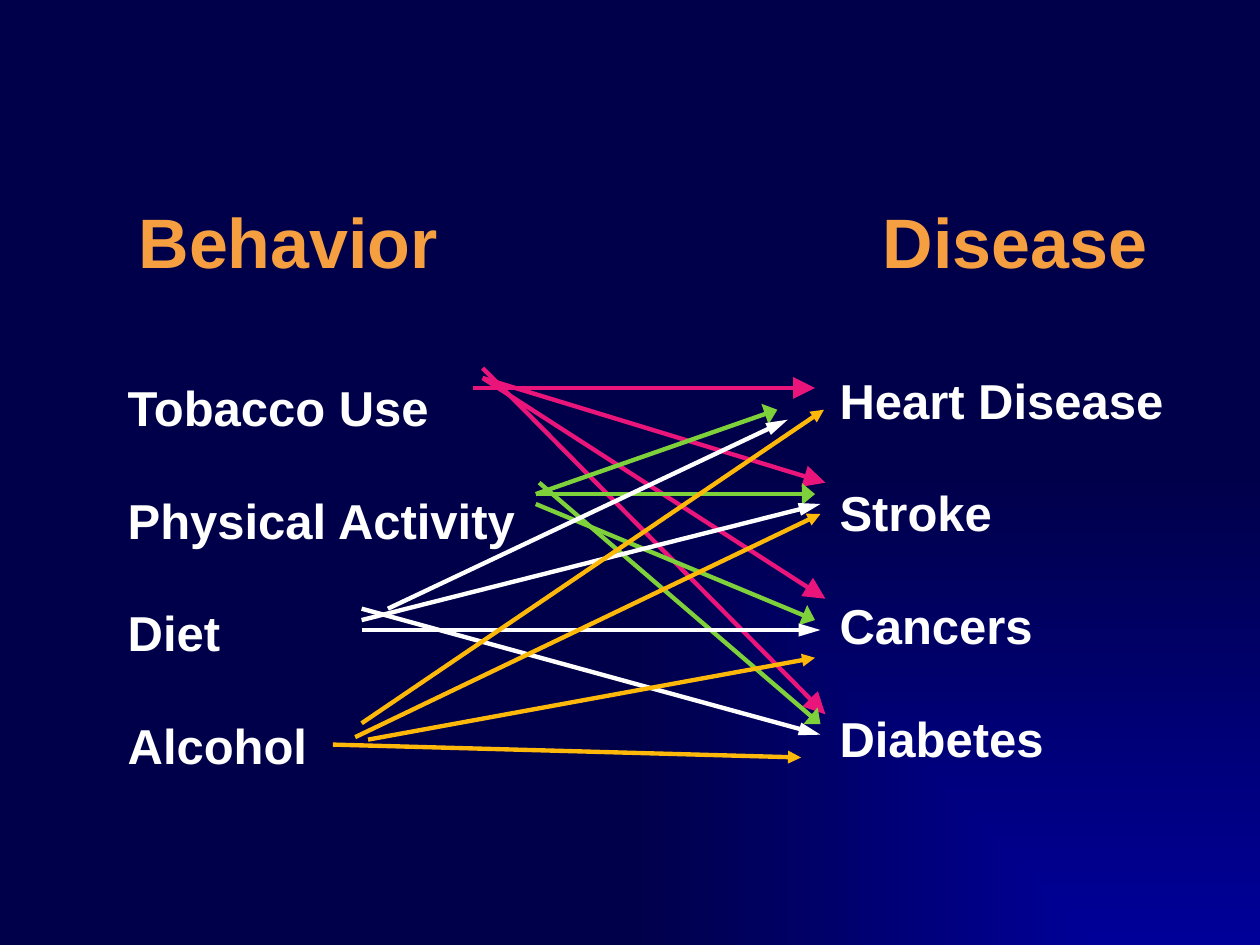
from pptx import Presentation
from pptx.dml.color import RGBColor
from pptx.enum.shapes import MSO_CONNECTOR
from pptx.enum.text import MSO_ANCHOR, MSO_AUTO_SIZE, PP_ALIGN
from pptx.oxml import parse_xml
from pptx.oxml.ns import nsdecls, qn
from pptx.util import Cm, Pt

BLUE = RGBColor(0x00, 0x00, 0x99)
NAVY = RGBColor(0x00, 0x00, 0x4A)
ORANGE = RGBColor(0xF5, 0x9F, 0x41)
WHITE = RGBColor(0xFF, 0xFF, 0xFF)
PINK = RGBColor(0xEA, 0x15, 0x7A)
GREEN = RGBColor(0x7F, 0xD1, 0x3B)
AMBER = RGBColor(0xFE, 0xB8, 0x0A)

# Content: boxes are left, top, width, height in centimetres
BEHAVIOR_HEADING = "Behavior"
BEHAVIOR_HEADING_BOX = (2.54, 3.47, 14.5, 2.74)
DISEASE_HEADING = "Disease"
DISEASE_HEADING_BOX = (17.55, 3.47, 6.58, 2.74)
BEHAVIORS = ["Tobacco Use", "Physical Activity", "Diet", "Alcohol"]
BEHAVIOR_BOX = (2.32, 6.73, 8.6, 9.17)
DISEASES = ["Heart Disease", "Stroke", "Cancers", "Diabetes"]
DISEASE_BOX = (16.67, 6.58, 7.4, 9.17)

# One group per behavior: colour, head width, head length,
# then one arrow to each disease as (x1, y1, x2, y2) in centimetres
ARROW_GROUPS = [
    (PINK, "lg", "lg", [
        (9.53, 7.82, 16.43, 7.82), (9.73, 7.62, 16.64, 9.73),
        (9.73, 7.62, 16.64, 12.07), (9.73, 7.42, 16.64, 14.4)]),
    (GREEN, "lg", "med", [
        (10.8, 9.96, 15.67, 8.26), (10.8, 9.96, 16.43, 9.96),
        (10.8, 10.16, 16.43, 12.5), (10.87, 9.73, 16.54, 14.6)]),
    (WHITE, "med", "lg", [
        (7.82, 12.27, 15.88, 8.46), (7.29, 12.5, 16.54, 10.16),
        (7.29, 12.7, 16.54, 12.7), (7.29, 12.27, 16.54, 14.81)]),
    (AMBER, "med", "med", [
        (7.29, 14.58, 16.61, 8.26), (7.16, 14.86, 16.54, 10.36),
        (7.42, 14.91, 16.43, 13.26), (6.71, 15.01, 16.15, 15.27)]),
]


def fill_text(shape, box, lines, size, color, line_spacing=1.0, space_before=0):
    """Place the shape and write one bold, unbulleted paragraph per line."""
    shape.left, shape.top, shape.width, shape.height = map(Cm, box)
    frame = shape.text_frame
    frame.text = "\n".join(lines)
    frame.word_wrap = True
    frame.auto_size = MSO_AUTO_SIZE.NONE
    frame.vertical_anchor = MSO_ANCHOR.MIDDLE
    for paragraph in frame.paragraphs:
        paragraph.alignment = PP_ALIGN.LEFT
        paragraph.line_spacing = line_spacing
        paragraph.space_before = Pt(space_before)
        properties = paragraph._p.get_or_add_pPr()
        properties.set("marL", "0")
        properties.set("indent", "0")
        properties.append(parse_xml(f"<a:buNone {nsdecls('a')}/>"))
        for run in paragraph.runs:
            run.font.name = "Arial"
            run.font.size = Pt(size)
            run.font.bold = True
            run.font.color.rgb = color


def add_arrow(slide, points, color, head_width, head_length):
    arrow = slide.shapes.add_connector(MSO_CONNECTOR.STRAIGHT, *map(Cm, points))
    arrow.line.color.rgb = color
    arrow.line.width = Pt(2.5)
    properties = arrow.element.spPr
    properties.find(qn("a:ln")).append(parse_xml(
        f'<a:tailEnd {nsdecls("a")} type="triangle" w="{head_width}" len="{head_length}"/>'))
    properties.append(parse_xml(f"<a:effectLst {nsdecls('a')}/>"))


presentation = Presentation()
presentation.slide_width, presentation.slide_height = Cm(25.4), Cm(19.05)
slide = presentation.slides.add_slide(presentation.slide_layouts[3])

# Background: gradient spreading from the bottom right corner
background = slide.background.fill
background.gradient()
for stop, color in zip(background.gradient_stops, (BLUE, NAVY)):
    stop.color.rgb = color
gradient = slide.element.find(".//" + qn("a:gradFill"))
gradient.replace(gradient.find(qn("a:lin")), parse_xml(
    f'<a:path {nsdecls("a")} path="rect"><a:fillToRect l="100000" t="100000"/></a:path>'))

# Headings, one above each list
title, behavior_list, disease_list = slide.placeholders
disease_heading = slide.shapes.add_textbox(*map(Cm, DISEASE_HEADING_BOX))
fill_text(title, BEHAVIOR_HEADING_BOX, [BEHAVIOR_HEADING], 40, ORANGE)
fill_text(disease_heading, DISEASE_HEADING_BOX, [DISEASE_HEADING], 40, ORANGE)

# Lists
for shape, box, lines in ((behavior_list, BEHAVIOR_BOX, BEHAVIORS),
                          (disease_list, DISEASE_BOX, DISEASES)):
    fill_text(shape, box, lines, 28, WHITE, line_spacing=1.5, space_before=14)

# Arrows from behaviors to diseases
for color, head_width, head_length, arrows in ARROW_GROUPS:
    for points in arrows:
        add_arrow(slide, points, color, head_width, head_length)

presentation.save("out.pptx")
